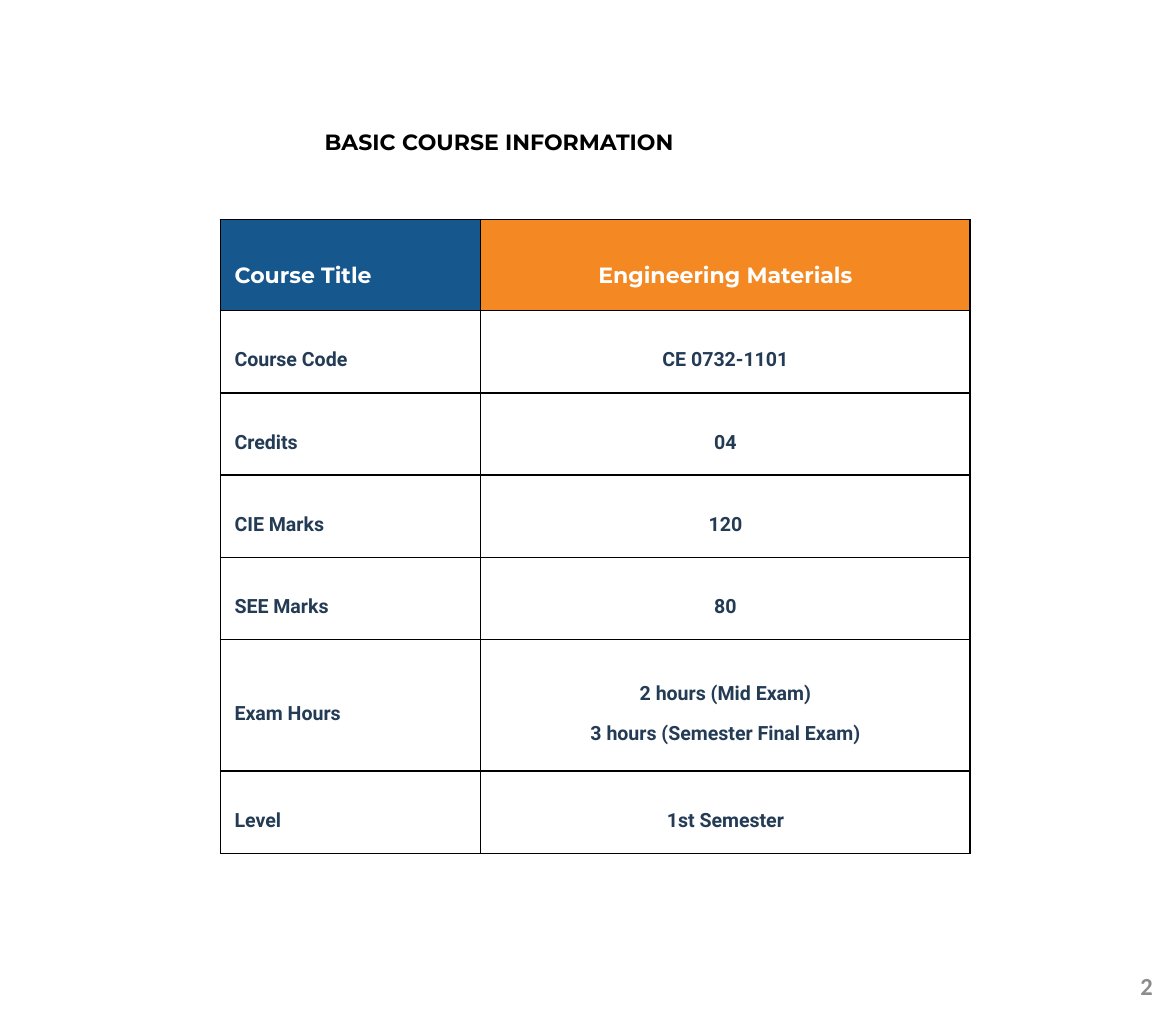
"""Build the basic course information slide."""
from lxml import etree
from pptx import Presentation
from pptx.dml.color import RGBColor
from pptx.enum import text
from pptx.oxml import ns
from pptx.util import Pt

LEFT, CENTER, RIGHT = text.PP_ALIGN.LEFT, text.PP_ALIGN.CENTER, text.PP_ALIGN.RIGHT


def color(fmt, value):
    if hasattr(fmt, "solid"):
        fmt.solid()
        fmt = fmt.fore_color
    else:
        fmt = fmt.color
    fmt.rgb = RGBColor.from_string(value)


def write(tf, content, size=16, font="Roboto", fill="243B55", align=LEFT, spacing=None):
    tf.word_wrap = True
    for i, line in enumerate(content.split("\n")):
        p = tf.paragraphs[0] if i == 0 else tf.add_paragraph()
        p.alignment = align
        if spacing:
            p.line_spacing = Pt(spacing)
        r = p.add_run()
        r.text = line
        r.font.size, r.font.name, r.font.bold = Pt(size), font, True
        color(r.font, fill)


prs = Presentation()
prs.slide_width, prs.slide_height = Pt(960), Pt(841.68)
s = prs.slides.add_slide(prs.slide_layouts[5])
color(s.background.fill, "FFFFFF")

title = s.shapes.title
title.left, title.top, title.width, title.height = Pt(257.8), Pt(72.7), Pt(590.4), Pt(49.7)
tf = title.text_frame
tf.auto_size = text.MSO_AUTO_SIZE.NONE
tf.vertical_anchor = text.MSO_ANCHOR.TOP
write(tf, "BASIC COURSE INFORMATION", size=18, font="Montserrat", fill="000000", spacing=50)

number = s.shapes.add_textbox(Pt(894.2), Pt(792.7), Pt(46.8), Pt(24.5))
tf = number.text_frame
tf.margin_left = tf.margin_right = tf.margin_top = tf.margin_bottom = 0
write(tf, "2", size=20, font="Calibri", fill="8C8C8C", align=RIGHT)

rows = [
    ("Course Title", "Engineering Materials", 74.2),
    ("Course Code", "CE 0732-1101", 67.2),
    ("Credits", "04", 67.2),
    ("CIE Marks", "120", 67.2),
    ("SEE Marks", "80", 67.2),
    ("Exam Hours", "2 hours (Mid Exam)\n3 hours (Semester Final Exam)", 107.3),
    ("Level", "1st Semester", 67.2),
]
columns = [(212.4, LEFT, "16578D"), (399.6, CENTER, "F48924")]
table = s.shapes.add_table(len(rows), len(columns), Pt(180), Pt(179.3), Pt(612), Pt(517.5)).table
table.horz_banding = False
for c, (width, align, header_fill) in enumerate(columns):
    table.columns[c].width = Pt(width)
    for r, row in enumerate(rows):
        table.rows[r].height = Pt(row[2])
        cell = table.cell(r, c)
        cell.vertical_anchor = text.MSO_ANCHOR.MIDDLE
        cell.margin_left = cell.margin_right = cell.margin_top = cell.margin_bottom = Pt(11.5)
        tcPr = cell._tc.get_or_add_tcPr()
        for side in ("a:lnL", "a:lnR", "a:lnT", "a:lnB"):
            ln = etree.SubElement(tcPr, ns.qn(side), w=str(Pt(1.5)))
            solid = etree.SubElement(ln, ns.qn("a:solidFill"))
            etree.SubElement(solid, ns.qn("a:srgbClr"), val="000000")
        if r == 0:
            color(cell.fill, header_fill)
            write(cell.text_frame, row[c], size=18, font="Montserrat", fill="FFFFFF",
                  align=align, spacing=38.8)
        else:
            color(cell.fill, "FFFFFF")
            write(cell.text_frame, row[c], align=align, spacing=32.5)

prs.save("out.pptx")
